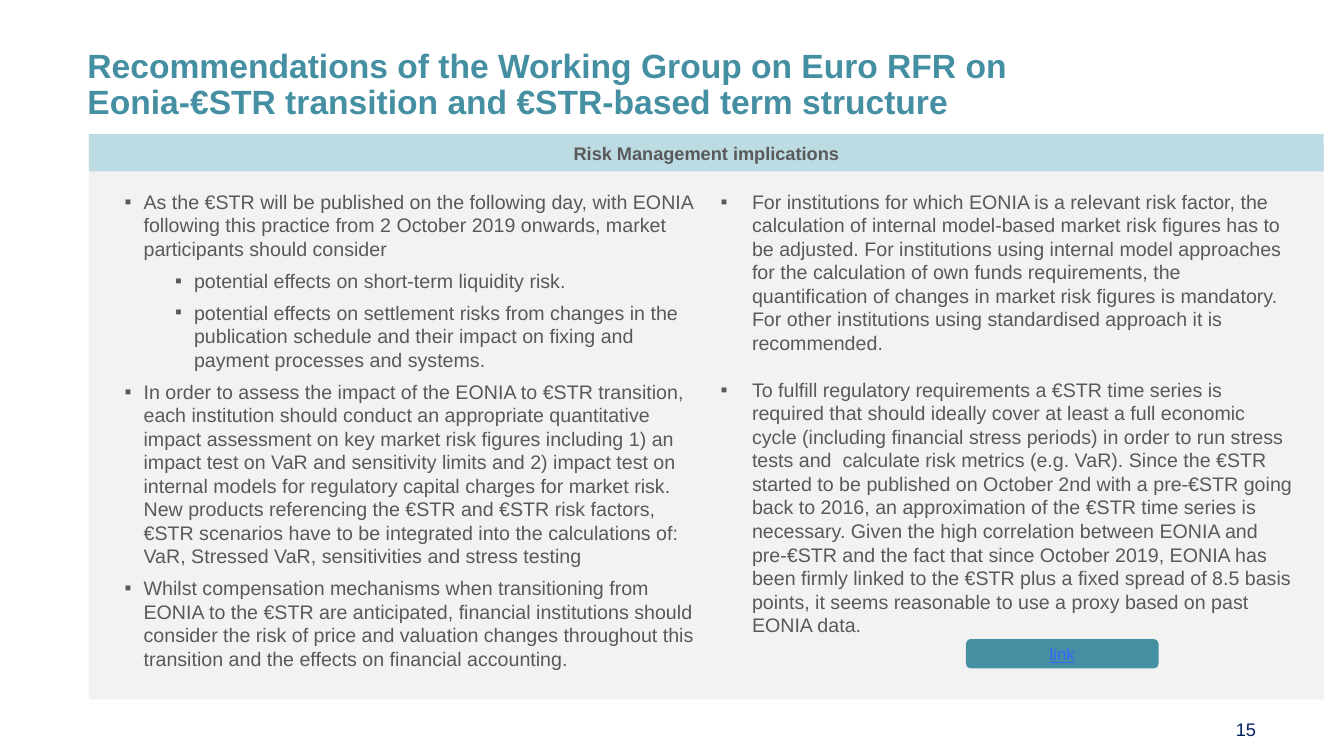
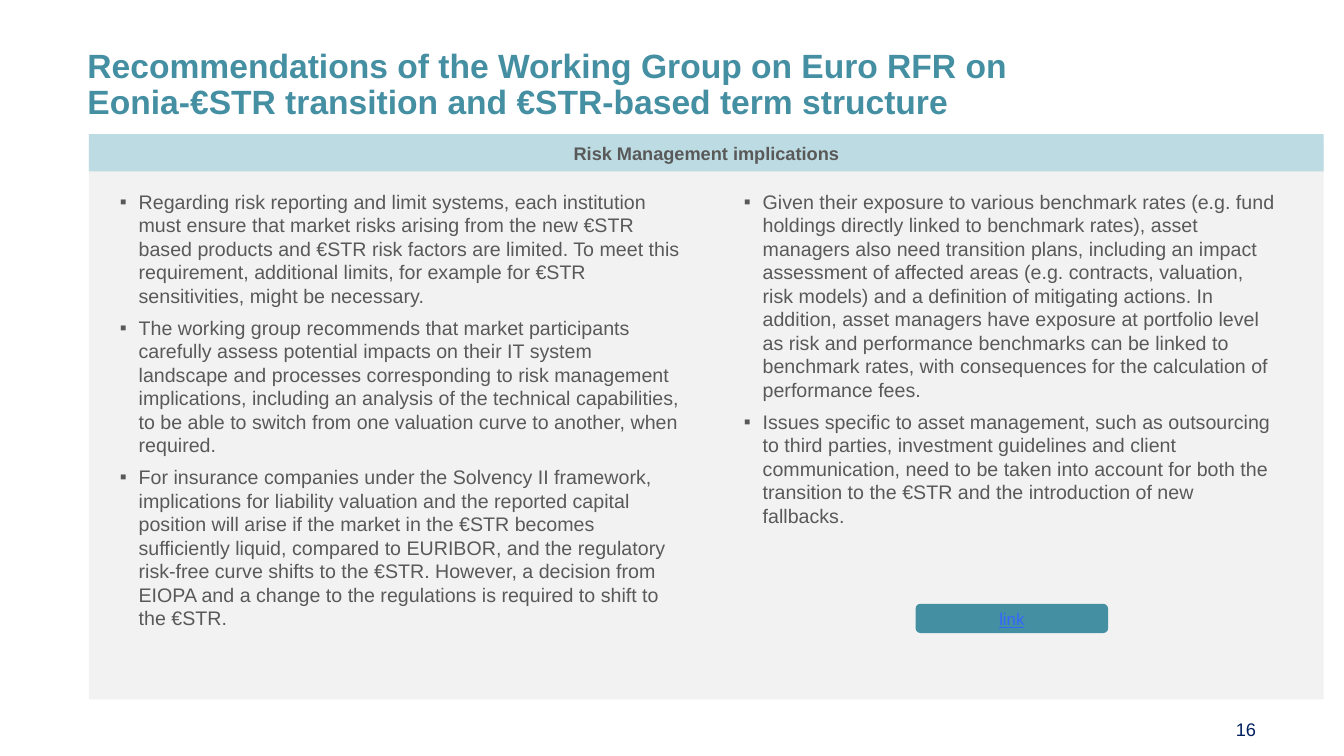
from dataclasses import dataclass

from lxml.etree import SubElement
from pptx import Presentation
from pptx.dml.color import RGBColor
from pptx.enum.shapes import MSO_SHAPE
from pptx.enum.text import MSO_ANCHOR, PP_ALIGN
from pptx.oxml.ns import qn
from pptx.util import Pt

# Content: columns are (box, indent, gap after, [(level, text), ...])
TITLE = ("Recommendations of the Working Group on Euro RFR on "
         "Eonia-€STR transition and €STR-based term structure")
BAND = "Risk Management implications"

SLIDES = [
    {
        "number": 15,
        "link": (690, 456.5),
        "columns": [
            ((82, 131.8, 432.7, 340.6), 13.5, 6, [
                (0, "As the €STR will be published on the following day, with EONIA following this "
                    "practice from 2 October 2019 onwards, market participants should consider"),
                (1, "potential effects on short-term liquidity risk."),
                (1, "potential effects on settlement risks from changes in the publication schedule "
                    "and their impact on fixing and payment processes and systems."),
                (0, "In order to assess the impact of the EONIA to €STR transition, each institution "
                    "should conduct an appropriate quantitative impact assessment on key market risk "
                    "figures including 1) an impact test on VaR and sensitivity limits and 2) impact "
                    "test on internal models for regulatory capital charges for market risk. New "
                    "products referencing the €STR and €STR risk factors, €STR scenarios have to be "
                    "integrated into the calculations of: VaR, Stressed VaR, sensitivities and "
                    "stress testing"),
                (0, "Whilst compensation mechanisms when transitioning from EONIA to the €STR are "
                    "anticipated, financial institutions should consider the risk of price and "
                    "valuation changes throughout this transition and the effects on financial "
                    "accounting."),
            ]),
            ((507.6, 131.8, 424.8, 312.5), 22.5, 16.8, [
                (0, "For institutions for which EONIA is a relevant risk factor, the calculation of "
                    "internal model-based market risk figures has to be adjusted. For institutions "
                    "using internal model approaches for the calculation of own funds requirements, "
                    "the quantification of changes in market risk figures is mandatory. For other "
                    "institutions using standardised approach it is recommended."),
                (0, "To fulfill regulatory requirements a €STR time series is required that should "
                    "ideally cover at least a full economic cycle (including financial stress "
                    "periods) in order to run stress tests and  calculate risk metrics (e.g. VaR). "
                    "Since the €STR started to be published on October 2nd with a pre-€STR going "
                    "back to 2016, an approximation of the €STR time series is necessary. Given the "
                    "high correlation between EONIA and pre-€STR and the fact that since October "
                    "2019, EONIA has been firmly linked to the €STR plus a fixed spread of 8.5 basis "
                    "points, it seems reasonable to use a proxy based on past EONIA data."),
            ]),
        ],
    },
    {
        "number": 16,
        "link": (654, 431.3),
        "columns": [
            ((78.5, 131.8, 419.8, 340.6), 13.5, 6, [
                (0, "Regarding risk reporting and limit systems, each institution must ensure that "
                    "market risks arising from the new €STR based products and €STR risk factors are "
                    "limited. To meet this requirement, additional limits, for example for €STR "
                    "sensitivities, might be necessary."),
                (0, "The working group recommends that market participants carefully assess potential "
                    "impacts on their IT system landscape and processes corresponding to risk "
                    "management implications, including an analysis of the technical capabilities, "
                    "to be able to switch from one valuation curve to another, when required."),
                (0, "For insurance companies under the Solvency II framework, implications for "
                    "liability valuation and the reported capital position will arise if the market "
                    "in the €STR becomes sufficiently liquid, compared to EURIBOR, and the "
                    "regulatory risk-free curve shifts to the €STR. However, a decision from EIOPA "
                    "and a change to the regulations is required to shift to the €STR."),
            ]),
            ((524.2, 131.8, 396.7, 234), 13.5, 6, [
                (0, "Given their exposure to various benchmark rates (e.g. fund holdings directly "
                    "linked to benchmark rates), asset managers also need transition plans, "
                    "including an impact assessment of affected areas (e.g. contracts, valuation, "
                    "risk models) and a definition of mitigating actions. In addition, asset "
                    "managers have exposure at portfolio level as risk and performance benchmarks "
                    "can be linked to benchmark rates, with consequences for the calculation of "
                    "performance fees."),
                (0, "Issues specific to asset management, such as outsourcing to third parties, "
                    "investment guidelines and client communication, need to be taken into account "
                    "for both the transition to the €STR and the introduction of new fallbacks."),
            ]),
        ],
    },
]


# Theme
@dataclass(frozen=True)
class Theme:
    font: str = "Arial"
    teal: str = "458FA3"
    pale_teal: str = "BDDBE3"
    panel: str = "F2F2F2"
    body: str = "595959"
    navy: str = "002060"
    link: str = "3366FF"
    title_size: float = 24
    body_size: float = 14
    label_size: float = 13
    link_size: float = 12


THEME = Theme()
SLIDE_SIZE = (960, 540)
TITLE_BOX = (55.4, 31.7, 697, 45.4)
PANEL_BOX = (63.4, 102.2, 882, 397.4)
BAND_BOX = (63.4, 95.8, 882, 26.6)
NUMBER_BOX = (688.3, 506.2, 216, 28.8)
LINK_SIZE = (137.5, 20.9)
LEVEL_STEP = 36

TITLE_STYLE = {"size": THEME.title_size, "color": THEME.teal, "bold": True}
BODY_STYLE = {"size": THEME.body_size, "color": THEME.body}
BAND_STYLE = {"size": THEME.label_size, "color": THEME.body, "bold": True}
NUMBER_STYLE = {"size": THEME.label_size, "color": THEME.navy}
LINK_STYLE = {"size": THEME.link_size, "color": THEME.link, "underline": True}


# Helpers
def apply(target, values):
    for name, value in values.items():
        setattr(target, name, value)


def write(para, text, style, **layout):
    apply(para, layout)
    span = para.add_run()
    span.text = text
    values = dict(style, name=THEME.font, size=Pt(style["size"]))
    span.font.color.rgb = RGBColor.from_string(values.pop("color"))
    apply(span.font, values)


def add_text_box(page, box):
    frame = page.shapes.add_textbox(*map(Pt, box)).text_frame
    frame.word_wrap = True
    return frame


def add_block(page, box, fill, kind=MSO_SHAPE.RECTANGLE):
    block = page.shapes.add_shape(kind, *map(Pt, box))
    block.shadow.inherit = False
    block.fill.solid()
    block.fill.fore_color.rgb = RGBColor.from_string(fill)
    block.line.fill.background()
    frame = block.text_frame
    apply(frame, {"margin_top": 0, "margin_bottom": 0, "word_wrap": True,
                  "vertical_anchor": MSO_ANCHOR.MIDDLE})
    return frame


def add_bullet(para, left, hanging):
    properties = para._p.get_or_add_pPr()
    properties.set("marL", str(Pt(left)))
    properties.set("indent", str(-Pt(hanging)))
    SubElement(properties, qn("a:buFont")).set("typeface", THEME.font)
    SubElement(properties, qn("a:buChar")).set("char", "▪")


def add_column(page, box, indent, gap, items):
    frame = add_text_box(page, box)
    for index, (level, text) in enumerate(items):
        para = frame.add_paragraph() if index else frame.paragraphs[0]
        add_bullet(para, indent + level * LEVEL_STEP, indent)
        write(para, text, BODY_STYLE, level=level, space_after=Pt(gap))


def add_page(deck, content):
    page = deck.slides.add_slide(deck.slide_layouts[6])

    # Page number and title
    number = add_text_box(page, NUMBER_BOX)
    number.vertical_anchor = MSO_ANCHOR.MIDDLE
    write(number.paragraphs[0], str(content["number"]), NUMBER_STYLE, alignment=PP_ALIGN.RIGHT)
    title = add_text_box(page, TITLE_BOX)
    write(title.paragraphs[0], TITLE, TITLE_STYLE, line_spacing=0.9)

    # Panel with its heading band
    add_block(page, PANEL_BOX, THEME.panel)
    band = add_block(page, BAND_BOX, THEME.pale_teal)
    write(band.paragraphs[0], BAND, BAND_STYLE, alignment=PP_ALIGN.CENTER)

    # Text columns and link button
    for column in content["columns"]:
        add_column(page, *column)
    button = add_block(page, content["link"] + LINK_SIZE, THEME.teal, MSO_SHAPE.ROUNDED_RECTANGLE)
    write(button.paragraphs[0], "link", LINK_STYLE, alignment=PP_ALIGN.CENTER)


def main():
    deck = Presentation()
    deck.slide_width, deck.slide_height = map(Pt, SLIDE_SIZE)
    for content in SLIDES:
        add_page(deck, content)
    deck.save("out.pptx")


if __name__ == "__main__":
    main()
